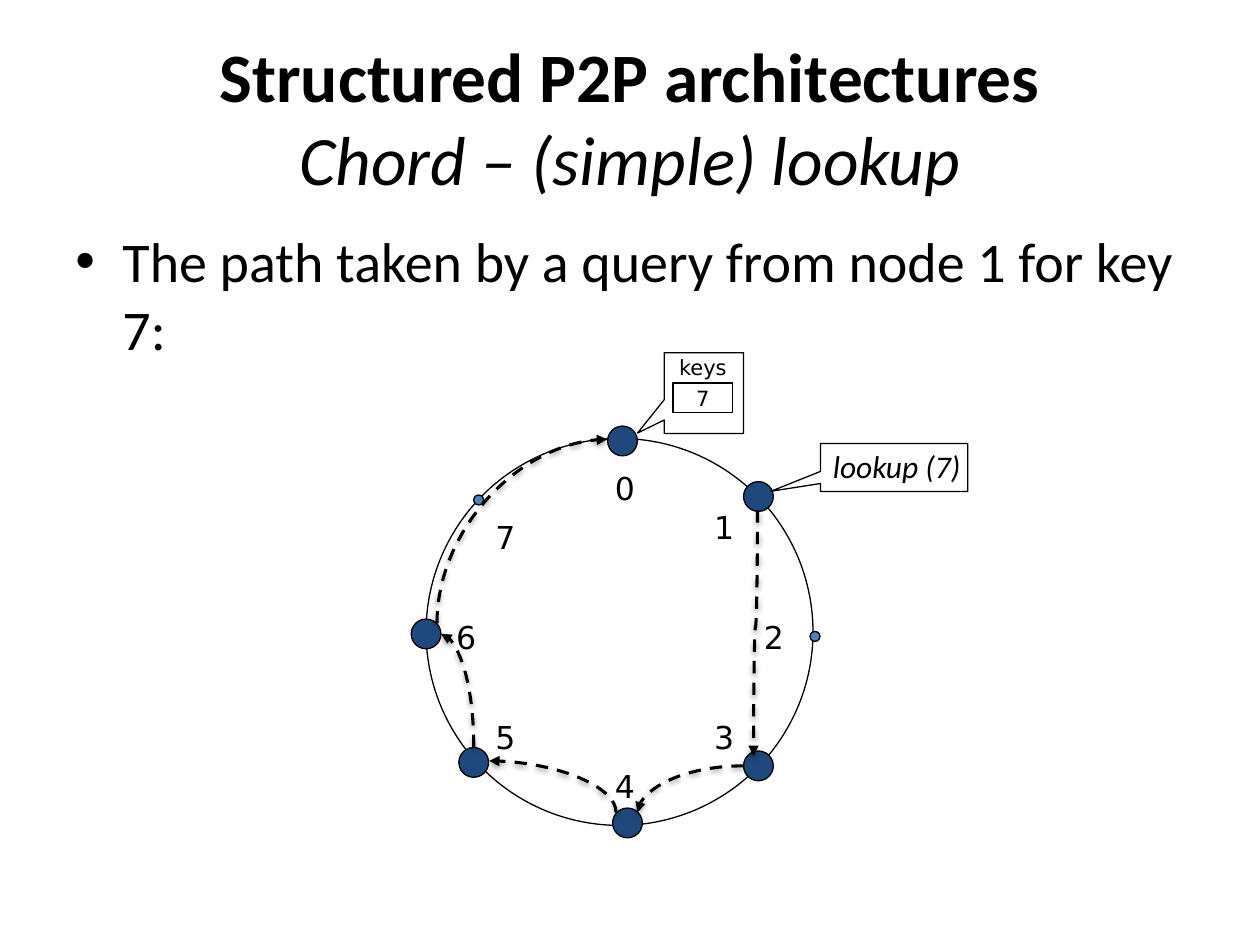
"""Build a slide showing a simple Chord lookup around a ring of nodes."""
from dataclasses import dataclass

from lxml import etree
from pptx import Presentation
from pptx.dml.color import RGBColor
from pptx.enum.dml import MSO_LINE
from pptx.enum.shapes import MSO_CONNECTOR, MSO_SHAPE
from pptx.enum.text import MSO_ANCHOR, PP_ALIGN
from pptx.oxml import parse_xml
from pptx.oxml.ns import nsdecls, qn
from pptx.util import Cm, Pt

OVAL, RECT, CALLOUT = MSO_SHAPE.OVAL, MSO_SHAPE.RECTANGLE, MSO_SHAPE.RECTANGULAR_CALLOUT
CURVE, DASH = MSO_CONNECTOR.CURVE, MSO_LINE.DASH
TOP, MIDDLE = MSO_ANCHOR.TOP, MSO_ANCHOR.MIDDLE
LEFT, CENTER = PP_ALIGN.LEFT, PP_ALIGN.CENTER


@dataclass(frozen=True)
class Theme:
    ink: RGBColor = RGBColor(0x00, 0x00, 0x00)
    node: RGBColor = RGBColor(0x1F, 0x49, 0x7D)
    dot: RGBColor = RGBColor(0x4F, 0x81, 0xBD)
    text_font: str = "Calibri"
    label_font: str = "DejaVu Sans"
    title: float = 39.6
    body: float = 32
    label: float = 18
    key: float = 12
    thin: float = 0.75
    arrow: float = 1.75


class Deck:
    def __init__(self, prs, theme):
        self.theme = theme
        self.s = prs.slides.add_slide(prs.slide_layouts[6])

    def style(self, p, size, font, align=LEFT):
        p.alignment = align
        p.font.size, p.font.name = Pt(size), font
        p.font.color.rgb = self.theme.ink

    def text(self, box, text, size, font, align=LEFT, anchor=TOP):
        sp = self.s.shapes.add_textbox(*map(Cm, box))
        tf = sp.text_frame
        tf.word_wrap, tf.vertical_anchor = True, anchor
        p = tf.paragraphs[0]
        p.text = text
        self.style(p, size, font, align)
        return p

    def title(self, box, name, topic):
        p = self.text(box, "", self.theme.title, self.theme.text_font, CENTER, MIDDLE)
        r = p.add_run()
        r.text, r.font.bold = name, True
        p.add_line_break()
        r = p.add_run()
        r.text, r.font.italic = topic, True

    def bullet(self, box, text):
        p = self.text(box, text, self.theme.body, self.theme.text_font)
        pr = p._p.get_or_add_pPr()
        pr.set("marL", str(Cm(0.95)))
        pr.set("indent", str(Cm(-0.95)))
        before = etree.Element(qn("a:spcBef"))
        etree.SubElement(before, qn("a:spcPct"), val="20000")
        pr.insert(0, before)
        before.addnext(etree.Element(qn("a:buFont"), typeface="Arial"))
        before.getnext().addnext(etree.Element(qn("a:buChar"), char="•"))

    def shape(self, kind, box, fill=None):
        sp = self.s.shapes.add_shape(kind, *map(Cm, box))
        sp.shadow.inherit = False
        if fill is None:
            sp.fill.background()
        else:
            sp.fill.solid()
            sp.fill.fore_color.rgb = fill
        sp.line.color.rgb, sp.line.width = self.theme.ink, Pt(self.theme.thin)
        return sp

    def circle(self, center, d, fill=None):
        x, y = center
        return self.shape(OVAL, (x - d / 2, y - d / 2, d, d), fill)

    def label(self, box, text, size):
        p = self.text(box, text, size, self.theme.label_font, CENTER, MIDDLE)
        self.fit(p._parent)

    def fit(self, tf):
        tf.word_wrap = False
        tf.margin_left = tf.margin_right = tf.margin_top = tf.margin_bottom = 0

    def key_box(self, box, text):
        tf = self.shape(RECT, box).text_frame
        tf.vertical_anchor = MIDDLE
        self.fit(tf)
        p = tf.paragraphs[0]
        p.text = text
        self.style(p, self.theme.key, self.theme.label_font, CENTER)

    def callout(self, box):
        sp = self.shape(CALLOUT, box)
        sp.adjustments[0], sp.adjustments[1] = -0.836, 0.494

    def hop(self, start, end, rot, flips="", preset="curvedConnector2", bend=None):
        (x1, y1), (x2, y2) = start, end
        w, h = abs(x2 - x1), abs(y2 - y1)
        if rot % 180:
            w, h = h, w
        c = self.s.shapes.add_connector(CURVE, 0, 0, 0, 0)
        c.left, c.top = Cm((x1 + x2 - w) / 2), Cm((y1 + y2 - h) / 2)
        c.width, c.height = Cm(w), Cm(h)
        pr = c._element.spPr
        xfrm = pr.find(qn("a:xfrm"))
        xfrm.set("rot", str(rot * 60000))
        for flip in flips:
            xfrm.set(f"flip{flip}", "1")
        geom = pr.find(qn("a:prstGeom"))
        geom.set("prst", preset)
        if bend is not None:
            guide = {"name": "adj1", "fmla": f"val {bend}"}
            etree.SubElement(geom.find(qn("a:avLst")), qn("a:gd"), guide)
        c.line.color.rgb, c.line.width = self.theme.ink, Pt(self.theme.arrow)
        c.line.dash_style = DASH
        etree.SubElement(pr.find(qn("a:ln")), qn("a:tailEnd"), type="triangle")
        pr.append(parse_xml(
            f'<a:effectLst {nsdecls("a")}><a:outerShdw blurRad="40000" dist="20000" '
            'dir="5400000" rotWithShape="0"><a:srgbClr val="000000">'
            '<a:alpha val="38000"/></a:srgbClr></a:outerShdw></a:effectLst>'))


def main():
    prs = Presentation()
    prs.slide_width, prs.slide_height = Cm(25.4), Cm(19.05)
    t = Theme()
    d = Deck(prs, t)

    d.bullet((1.27, 4.45, 22.86, 12.57), "The path taken by a query from node 1 for key 7:")
    d.title((1.27, 0.76, 22.86, 3.18), "Structured P2P architectures", "Chord – (simple) lookup")

    positions = [(12.55, 8.89), (15.29, 10.01), (16.43, 12.83), (15.29, 15.44),
                 (12.65, 16.59), (9.55, 15.37), (8.59, 12.78), (9.65, 10.08)]
    labels = [(12.6, 9.84), (14.6, 10.63), (15.6, 12.84), (14.6, 14.85),
              (12.6, 15.84), (10.19, 14.85), (9.4, 12.84), (10.19, 10.83)]
    absent = {2, 7}
    d.circle((12.49, 12.74), 7.8)
    for i, (x, y) in enumerate(labels):
        d.label((x - 0.4, y - 0.4, 0.8, 0.8), str(i), t.label)
    for i, center in enumerate(positions):
        if i in absent:
            d.circle(center, 0.2, t.dot)
        else:
            d.circle(center, 0.6, t.node)

    d.hop((15.27, 10.29), (15.19, 15.24), 90, preset="curvedConnector3", bend=47300)
    d.hop((14.99, 15.44), (12.85, 16.38), 180, "V")
    d.hop((12.42, 16.38), (9.86, 15.34), 270, "V")
    d.hop((9.55, 15.06), (8.89, 12.78), 270, "V")
    d.hop((8.81, 12.57), (12.24, 8.86), 90, "HV")

    d.callout((13.39, 7.11, 1.6, 1.63))
    d.label((13.57, 7.11, 1.2, 0.6), "keys", t.key)
    d.key_box((13.57, 7.72, 1.2, 0.6), "7")
    d.callout((16.54, 8.94, 2.97, 0.97))
    p = d.text((16.54, 8.89, 3.28, 1.02), "lookup (7)", t.label, t.text_font)
    p.font.italic = True

    prs.save("out.pptx")


if __name__ == "__main__":
    main()
